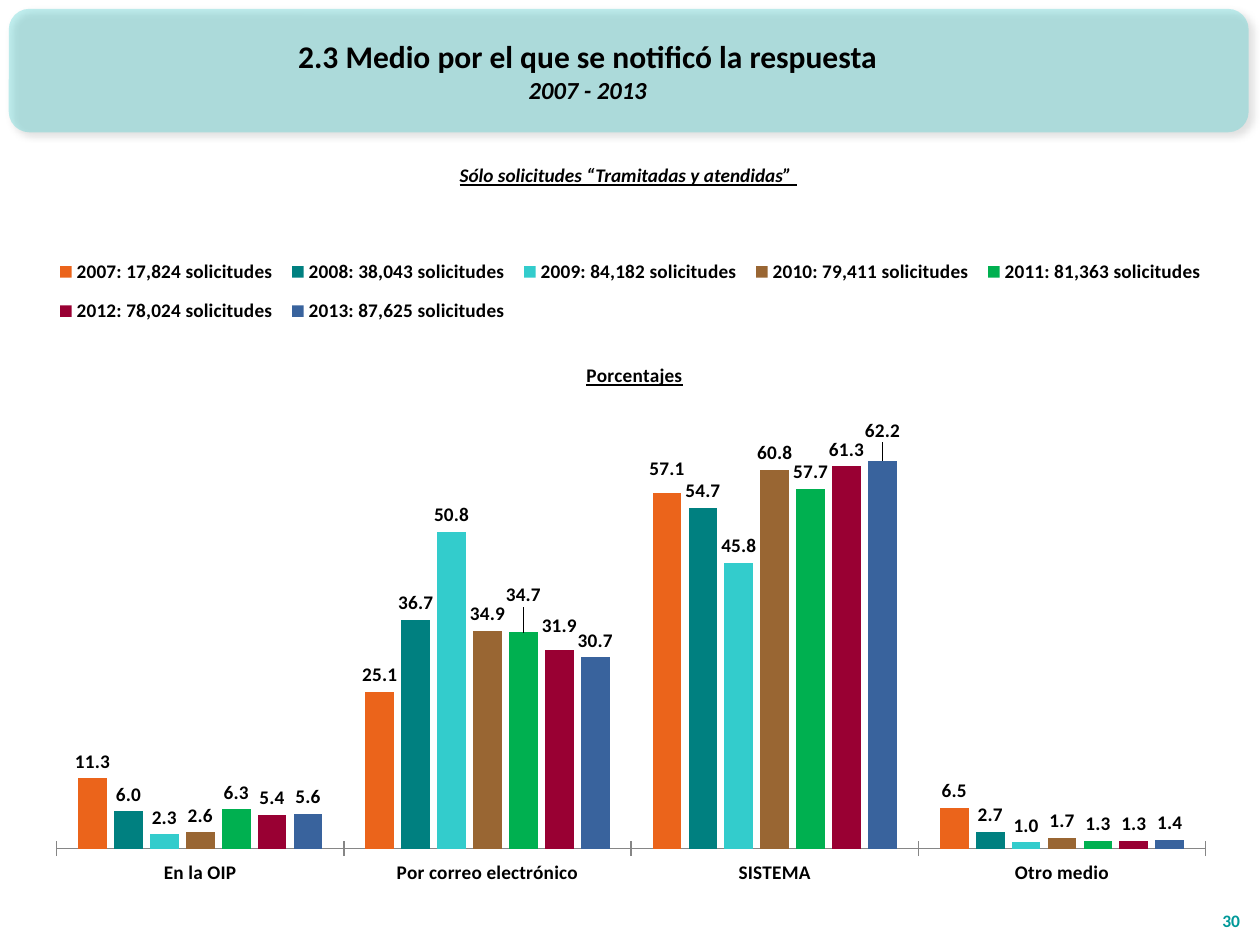
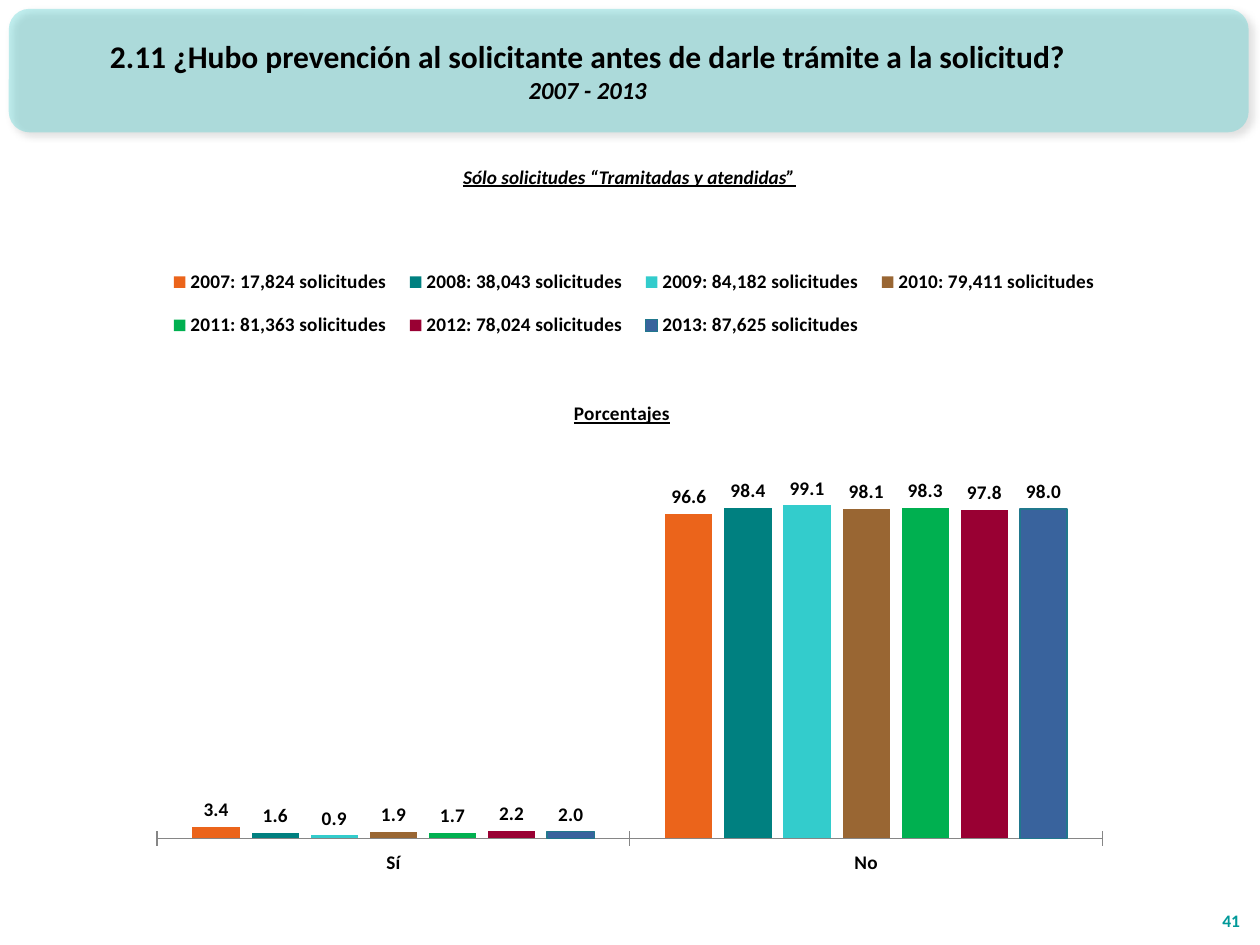
from lxml import etree
from pptx import Presentation
from pptx.chart.data import CategoryChartData
from pptx.dml.color import RGBColor
from pptx.enum import chart as ch, shapes, text
from pptx.oxml import ns, parse_xml
from pptx.util import Inches, Pt

FONT = "Calibri"
BLACK, TEAL, AQUA, AXIS_GREY = "000000", "009999", "33CCCC", "868686"
PERIOD = "2007 - 2013"
CHART_TITLE = "Porcentajes"
YEARS = [
    ("2007: 17,824 solicitudes", "EB641B"),
    ("2008: 38,043 solicitudes", "008080"),
    ("2009: 84,182 solicitudes", "33CCCC"),
    ("2010: 79,411 solicitudes", "996633"),
    ("2011: 81,363 solicitudes", "00B050"),
    ("2012: 78,024 solicitudes", "990033"),
    ("2013: 87,625 solicitudes", "39639D"),
]
SLIDES = [
    dict(
        title="2.3 Medio por el que se notificó la respuesta",
        scope="Sólo solicitudes “Tramitadas y atendidas” ",
        scope_box=(0.7, 1.25, 8.57, 0.29),
        number="30",
        chart_box=(0.28, 1.78, 9.45, 5.33),
        top=70,
        plot=(0.018, 0.28, 0.965, 0.65),
        legend=(0.01, 0.03, 0.98, 0.14),
        heading=(0.46, 0.2),
        percentages={
            "En la OIP": (11.3, 6.0, 2.3, 2.6, 6.3, 5.4, 5.6),
            "Por correo electrónico": (25.1, 36.7, 50.8, 34.9, 34.7, 31.9, 30.7),
            "SISTEMA": (57.1, 54.7, 45.8, 60.8, 57.7, 61.3, 62.2),
            "Otro medio": (6.5, 2.7, 1.0, 1.7, 1.3, 1.3, 1.4),
        },
        moved_labels={
            (0, 2): (0, -0.01), (4, 1): (0, -0.03), (5, 1): (0, -0.01),
            (5, 2): (0, 0), (6, 1): (0, 0), (6, 2): (0, -0.02),
        },
        outlines={},
    ),
    dict(
        title="2.11 ¿Hubo prevención al solicitante antes de darle trámite a la solicitud?",
        scope="Sólo solicitudes “Tramitadas y atendidas”",
        scope_box=(2.31, 1.26, 5.37, 0.29),
        number="41",
        chart_box=(1.09, 1.78, 7.81, 5.26),
        top=120,
        plot=(0.02, 0.318, 0.961, 0.609),
        legend=(0.02, 0.04, 0.97, 0.16),
        heading=(0.44, 0.26),
        percentages={
            "Sí": (3.4, 1.6, 0.9, 1.9, 1.7, 2.2, 2.0),
            "No": (96.6, 98.4, 99.1, 98.1, 98.3, 97.8, 98.0),
        },
        moved_labels={},
        outlines={6: "21788D"},
    ),
]


def rgb(color):
    return RGBColor.from_string(color)


def inches(box):
    return [Inches(length) for length in box]


def style(font, size, color=BLACK, italic=None, underline=None):
    font.name, font.size, font.bold = FONT, Pt(size), True
    font.italic, font.underline = italic, underline
    font.color.rgb = rgb(color)


def set_layout(parent, index, values, modes=(), target=None):
    for old in parent.findall(ns.qn("c:layout")):
        parent.remove(old)
    layout = etree.Element(ns.qn("c:layout"))
    manual = etree.SubElement(layout, ns.qn("c:manualLayout"))
    settings = [("layoutTarget", target)] if target else []
    settings += [(mode, "edge") for mode in modes]
    settings += zip("xywh", values)
    for tag, value in settings:
        etree.SubElement(manual, ns.qn(f"c:{tag}")).set("val", str(value))
    parent.insert(index, layout)


def add_band(slide):
    band = slide.shapes.add_shape(
        shapes.MSO_SHAPE.ROUNDED_RECTANGLE, *inches((0.07, 0.07, 9.84, 0.98)))
    band.fill.solid()
    band.fill.fore_color.rgb = rgb(AQUA)
    band.line.fill.background()
    color = band._element.spPr.find(".//" + ns.qn("a:srgbClr"))
    etree.SubElement(color, ns.qn("a:alpha")).set("val", "30000")
    band._element.spPr.append(parse_xml(
        f'<a:effectLst {ns.nsdecls("a")}>'
        f'<a:outerShdw blurRad="{Pt(4)}" dist="{Pt(3)}" dir="2700000" algn="tl" rotWithShape="0">'
        '<a:srgbClr val="000000"><a:alpha val="40000"/></a:srgbClr>'
        '</a:outerShdw></a:effectLst>'))
    slide.slide_layout.shapes._spTree.insert(2, band._element)


def fill_title(title, heading):
    title.left, title.top, title.width, title.height = inches((0.08, 0.09, 9.17, 0.94))
    frame = title.text_frame
    frame.text = f"{heading}\n{PERIOD}"
    frame.auto_size = text.MSO_AUTO_SIZE.NONE
    frame.vertical_anchor = text.MSO_ANCHOR.MIDDLE
    for paragraph, size, italic in zip(frame.paragraphs, (18, 14), (None, True)):
        paragraph.alignment = text.PP_ALIGN.CENTER
        style(paragraph.font, size, italic=italic)


def add_text(slide, box, words, align, anchor, **look):
    frame = slide.shapes.add_textbox(*inches(box)).text_frame
    frame.word_wrap = True
    frame.vertical_anchor = anchor
    paragraph = frame.paragraphs[0]
    paragraph.text, paragraph.alignment = words, align
    style(paragraph.font, **look)


def add_percentages(slide, page):
    table = page["percentages"]
    data = CategoryChartData(number_format="0.0")
    data.categories = list(table)
    for (name, _), values in zip(YEARS, zip(*table.values())):
        data.add_series(name, values)
    chart = slide.shapes.add_chart(
        ch.XL_CHART_TYPE.COLUMN_CLUSTERED, *inches(page["chart_box"]), data).chart
    style(chart.font, 11)

    chart.chart_title.text_frame.text = CHART_TITLE
    style(chart.chart_title.text_frame.paragraphs[0].font, 11, underline=True)
    set_layout(chart.chart_title._element, 1, page["heading"], ("xMode", "yMode"))
    chart.has_legend = True
    chart.legend.position = ch.XL_LEGEND_POSITION.TOP
    chart.legend.include_in_layout = False
    set_layout(chart.legend._element, 1, page["legend"], ("xMode", "yMode"))
    set_layout(chart._chartSpace.chart.plotArea, 0, page["plot"], ("xMode", "yMode"), "inner")

    percent_axis, medium_axis = chart.value_axis, chart.category_axis
    percent_axis.minimum_scale, percent_axis.maximum_scale = 0, page["top"]
    percent_axis.has_major_gridlines = False
    percent_axis.visible = False
    medium_axis.major_tick_mark = ch.XL_TICK_MARK.CROSS
    medium_axis.format.line.color.rgb = rgb(AXIS_GREY)

    plot = chart.plots[0]
    plot.gap_width, plot.overlap, plot.vary_by_categories = 150, -25, False
    for index, (series, (_, color)) in enumerate(zip(plot.series, YEARS)):
        series.format.fill.solid()
        series.format.fill.fore_color.rgb = rgb(color)
        if index in page["outlines"]:
            series.format.line.color.rgb = rgb(page["outlines"][index])
            series.format.line.width = Pt(0.75)
        labels = series.data_labels
        labels.show_value = True
        labels.number_format, labels.number_format_is_linked = "0.0", False
        labels.position = ch.XL_LABEL_POSITION.OUTSIDE_END
        style(labels.font, 11)
    for (year, medium), shift in page["moved_labels"].items():
        series = plot.series[year]
        label = series.points[medium].data_label
        label.position = ch.XL_LABEL_POSITION.OUTSIDE_END
        style(label.font, 11)
        element = series._element.xpath(f"c:dLbls/c:dLbl[c:idx/@val='{medium}']")[0]
        set_layout(element, 1, shift)


def main():
    deck = Presentation()
    deck.slide_width, deck.slide_height = Inches(10), Inches(7.5)
    title_only = deck.slide_layouts[5]
    for position, page in enumerate(SLIDES):
        slide = deck.slides.add_slide(title_only)
        if position == 0:
            add_band(slide)
        fill_title(slide.shapes.title, page["title"])
        add_text(slide, page["scope_box"], page["scope"], text.PP_ALIGN.CENTER,
                 text.MSO_ANCHOR.TOP, size=11, italic=True, underline=True)
        add_percentages(slide, page)
        add_text(slide, (9.54, 7.04, 0.4, 0.4), page["number"], text.PP_ALIGN.RIGHT,
                 text.MSO_ANCHOR.BOTTOM, size=10, color=TEAL)
    deck.save("out.pptx")


if __name__ == "__main__":
    main()
